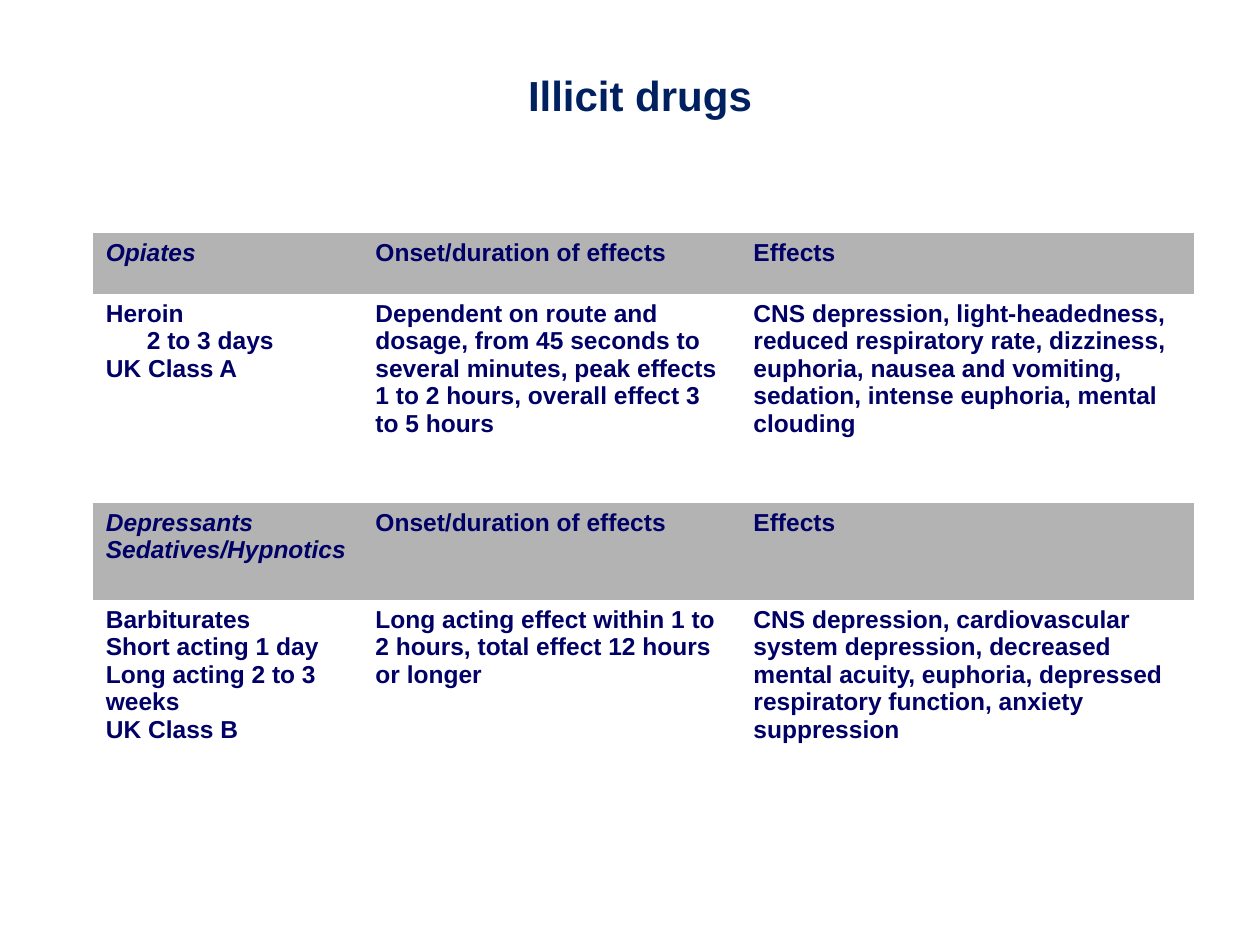
from dataclasses import dataclass

from pptx import Presentation
from pptx.dml.color import RGBColor
from pptx.enum.text import MSO_ANCHOR as Anchor, PP_ALIGN as Align
from pptx.oxml.ns import qn
from pptx.util import Inches, Pt

PAGE_WIDTH, PAGE_HEIGHT = Inches(10), Inches(7.5)
FONT = "Arial"
NAVY, TITLE_BLUE, GREY = "000066", "002060", "B3B3B3"
PLAIN_TABLE_STYLE = "{2D5ABB26-0587-4C30-8999-92F81FD0307C}"
COLUMN_SHARES = (21.4, 30, 36)
BODY_SHARE = 22.13


@dataclass(frozen=True)
class Line:
    """One paragraph and its indent as a percentage of the page width."""
    text: str
    indent: float = 0


@dataclass(frozen=True)
class DrugGroup:
    """A heading row and the drug row below it."""
    heading: tuple[Line, ...]
    heading_share: float
    drug: tuple[Line, ...]
    onset: str
    effects: str


GROUPS = (
    DrugGroup(
        (Line("Opiates"),), 6.4,
        (Line("Heroin"), Line("2 to 3 days", 3.25), Line("UK Class A")),
        "Dependent on route and dosage, from 45 seconds to several minutes, "
        "peak effects 1 to 2 hours, overall effect 3 to 5 hours",
        "CNS depression, light-headedness, reduced respiratory rate, dizziness, "
        "euphoria, nausea and vomiting, sedation, intense euphoria, mental clouding",
    ),
    DrugGroup(
        (Line("Depressants"), Line("Sedatives/Hypnotics")), 10.27,
        (Line("Barbiturates"), Line("Short acting 1 day"),
         Line("Long acting 2 to 3 weeks"), Line("UK Class B")),
        "Long acting effect within 1 to 2 hours, total effect 12 hours or longer",
        "CNS depression, cardiovascular system depression, decreased mental acuity, "
        "euphoria, depressed respiratory function, anxiety suppression",
    ),
)


def across(share: float) -> int:
    """Return a percentage of the page width."""
    return round(PAGE_WIDTH * share / 100)


def down(share: float) -> int:
    """Return a percentage of the page height."""
    return round(PAGE_HEIGHT * share / 100)


def colour(code: str) -> RGBColor:
    """Turn a hex string into a colour."""
    return RGBColor.from_string(code)


def write(frame, lines: tuple[Line, ...], size: float, code: str,
          align: Align = Align.LEFT, italic: bool = False) -> None:
    """Write bold lines into a text frame."""
    for index, line in enumerate(lines):
        para = frame.add_paragraph() if index else frame.paragraphs[0]
        para.alignment = align
        if line.indent:
            para._p.get_or_add_pPr().set("marL", str(across(line.indent)))
        span = para.add_run()
        span.text = line.text
        span.font.name, span.font.size = FONT, Pt(size)
        span.font.bold, span.font.italic = True, italic
        span.font.color.rgb = colour(code)


def add_title(page, text: str) -> None:
    """Add the centred title."""
    box = page.shapes.add_textbox(across(8.3), down(5.87), across(85), down(8.4))
    box.text_frame.word_wrap = True
    box.text_frame.vertical_anchor = Anchor.MIDDLE
    write(box.text_frame, (Line(text),), 24, TITLE_BLUE, Align.CENTER)


def fill_row(table, row: int, share: float, cells: tuple[tuple[Line, ...], ...],
             heading: bool) -> None:
    """Fill a table row in heading or body style."""
    table.rows[row].height = down(share)
    for column, lines in enumerate(cells):
        cell = table.cell(row, column)
        if heading:
            cell.fill.solid()
            cell.fill.fore_color.rgb = colour(GREY)
        else:
            cell.fill.background()
        justified = heading and column < 2
        write(cell.text_frame, lines, 14, NAVY,
              Align.JUSTIFY if justified else Align.LEFT, heading and column == 0)


def add_drug_table(page, groups: tuple[DrugGroup, ...]) -> None:
    """Add the table with two rows for each group."""
    height = sum(group.heading_share + BODY_SHARE for group in groups)
    table = page.shapes.add_table(
        2 * len(groups), len(COLUMN_SHARES), across(7.4), down(24.67),
        across(sum(COLUMN_SHARES)), down(height)).table
    table.first_row = table.horz_banding = False
    table._tbl.tblPr.find(qn("a:tableStyleId")).text = PLAIN_TABLE_STYLE
    for column, share in zip(table.columns, COLUMN_SHARES):
        column.width = across(share)
    for index, group in enumerate(groups):
        headings = (group.heading, (Line("Onset/duration of effects"),), (Line("Effects"),))
        details = (group.drug, (Line(group.onset),), (Line(group.effects),))
        fill_row(table, 2 * index, group.heading_share, headings, True)
        fill_row(table, 2 * index + 1, BODY_SHARE, details, False)


def main() -> None:
    """Build and save the slide."""
    deck = Presentation()
    deck.slide_width, deck.slide_height = PAGE_WIDTH, PAGE_HEIGHT
    page = deck.slides.add_slide(deck.slide_layouts[6])
    add_drug_table(page, GROUPS)
    add_title(page, "Illicit drugs")
    deck.save("out.pptx")


if __name__ == "__main__":
    main()
